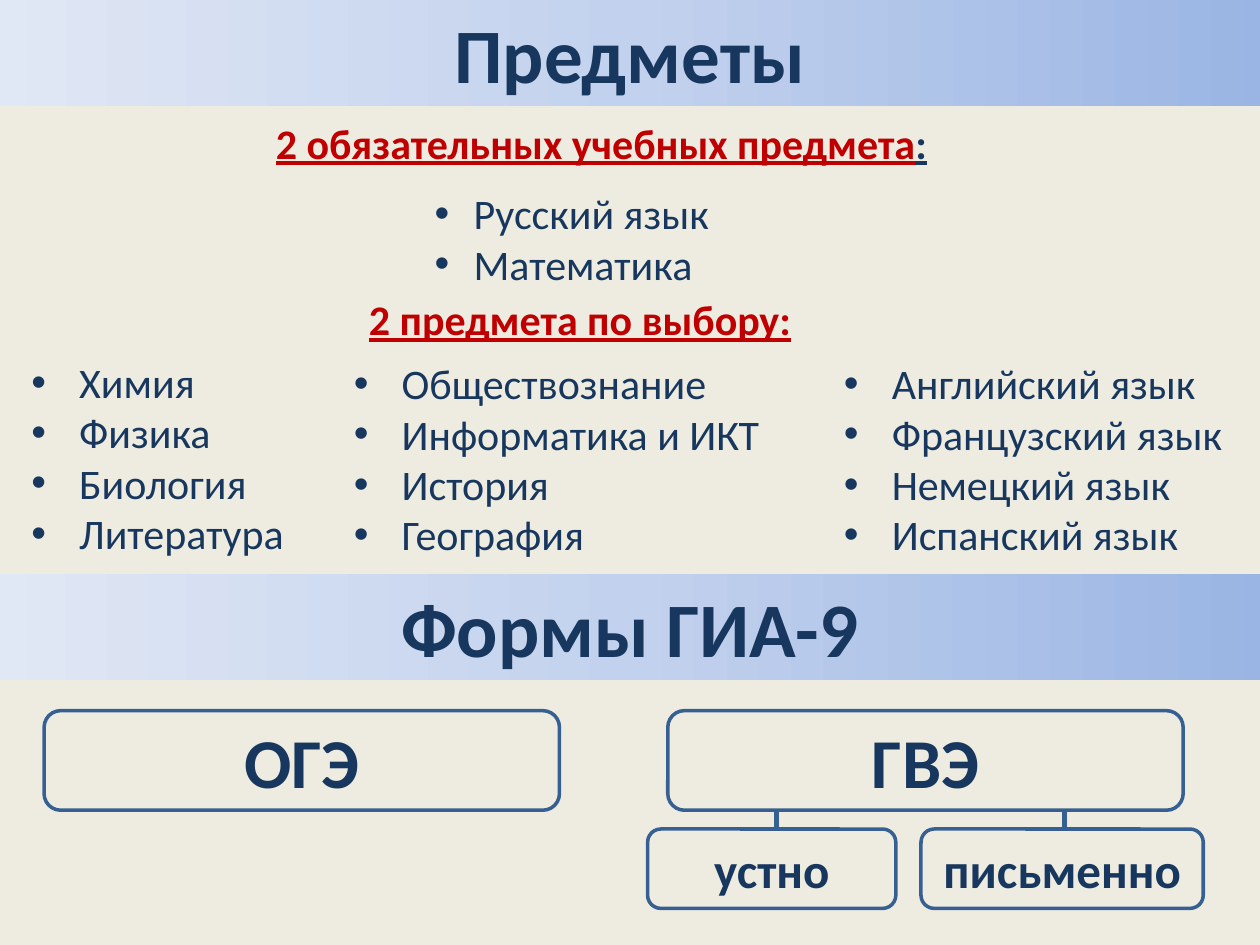
from copy import deepcopy
from lxml import etree
from pptx import Presentation
from pptx.dml.color import RGBColor
from pptx.enum.shapes import MSO_CONNECTOR, MSO_SHAPE
from pptx.enum.text import MSO_ANCHOR, PP_ALIGN
from pptx.oxml.ns import qn
from pptx.util import Inches, Pt

ROUND, RECT = MSO_SHAPE.ROUNDED_RECTANGLE, MSO_SHAPE.RECTANGLE
STRAIGHT = MSO_CONNECTOR.STRAIGHT
CENTER, LEFT = PP_ALIGN.CENTER, PP_ALIGN.LEFT
MIDDLE, TOP = MSO_ANCHOR.MIDDLE, MSO_ANCHOR.TOP
NAVY, RED, BLUE = "17375E", "C00000", "376092"


def color(value):
    return RGBColor.from_string(value)


def write(s, lines, size, ink=NAVY, bold=False, align=LEFT, anchor=TOP, indent=None):
    tf = s.text_frame
    tf.word_wrap = True
    tf.vertical_anchor = anchor
    tf.text = "\n".join(lines)
    for p in tf.paragraphs:
        p.alignment = align
        for r in p.runs:
            r.font.name = "Calibri"
            r.font.size = Pt(size)
            r.font.bold = bold
            r.font.color.rgb = color(ink)
        if indent:
            margin, hang = indent
            pPr = p._p.get_or_add_pPr()
            pPr.set("marL", str(Inches(margin)))
            pPr.set("indent", str(Inches(-hang)))
            etree.SubElement(pPr, qn("a:buFont")).set("typeface", "Arial")
            etree.SubElement(pPr, qn("a:buChar")).set("char", "•")
    return tf


prs = Presentation()
prs.slide_width, prs.slide_height = Inches(10), Inches(7.5)
slide = prs.slides.add_slide(prs.slide_layouts[5])
slide.background.fill.solid()
slide.background.fill.fore_color.rgb = color("EEECE1")

title = slide.shapes.title
title.left, title.top = Inches(-0.12), Inches(0)
title.width, title.height = Inches(10.24), Inches(0.84)
forms = slide.shapes.add_shape(RECT, Inches(-0.12), Inches(4.56), Inches(10.24), Inches(0.84))
forms.shadow.inherit = False
forms.line.fill.background()
for s, text in [(title, "Предметы"), (forms, "Формы ГИА-9")]:
    s.fill.gradient()
    s.fill.gradient_angle = 180
    stops = s._element.spPr.find(".//" + qn("a:gsLst"))
    stops.insert(1, deepcopy(stops[0]))
    for stop, (position, value) in zip(
        s.fill.gradient_stops, [(0, "9AB5E4"), (0.5, "C2D1ED"), (1, "E1E8F5")]
    ):
        stop.position = position
        stop.color.rgb = color(value)
    write(s, [text], 44, bold=True, align=CENTER)

s = slide.shapes.add_textbox(Inches(2.09), Inches(0.88), Inches(6.22), Inches(0.5))
tf = write(s, ["2 обязательных учебных предмета"], 24, RED, True)
r = tf.paragraphs[0].add_run()
r.text = ":"
r.font.name, r.font.size, r.font.bold = "Calibri", Pt(24), True
r.font.color.rgb = color(NAVY)
for r in tf.paragraphs[0].runs:
    r.font.underline = True

s = slide.shapes.add_textbox(Inches(2.83), Inches(2.28), Inches(3.59), Inches(0.5))
tf = write(s, ["2 предмета по выбору:"], 24, RED, True)
tf.paragraphs[0].runs[0].font.underline = True

subjects = [
    (2.09, 1.44, 6.22, (1.57, 0.31), ["Русский язык", "Математика"]),
    (0.15, 2.78, 2.35, (0.38, 0.38), ["Химия", "Физика", "Биология", "Литература"]),
    (2.71, 2.79, 3.86, (0.38, 0.38),
     ["Обществознание", "Информатика и ИКТ", "История", "География"]),
    (6.6, 2.79, 3.64, (0.38, 0.38),
     ["Английский язык", "Французский язык", "Немецкий язык", "Испанский язык"]),
]
for x, y, w, indent, names in subjects:
    s = slide.shapes.add_textbox(Inches(x), Inches(y), Inches(w), Inches(0.1 + 0.4 * len(names)))
    write(s, names, 24, indent=indent)

exams = [
    (0.35, 5.64, 4.09, 0.79, "ОГЭ", 40),
    (5.3, 5.64, 4.09, 0.79, "ГВЭ", 40),
    (5.14, 6.58, 1.97, 0.63, "устно", 28),
    (7.31, 6.58, 2.24, 0.63, "письменно", 28),
]
for x, y, w, h, text, size in exams:
    s = slide.shapes.add_shape(ROUND, Inches(x), Inches(y), Inches(w), Inches(h))
    s.shadow.inherit = False
    s.fill.background()
    s.line.color.rgb = color(BLUE)
    s.line.width = Pt(2)
    write(s, [text], size, bold=True, align=CENTER, anchor=MIDDLE)

for x in (6.16, 8.45):
    s = slide.shapes.add_connector(STRAIGHT, Inches(x), Inches(6.43), Inches(x), Inches(6.58))
    s.line.color.rgb = color(BLUE)
    s.line.width = Pt(2.75)
    etree.SubElement(s._element.spPr, qn("a:effectLst"))

prs.save("out.pptx")
